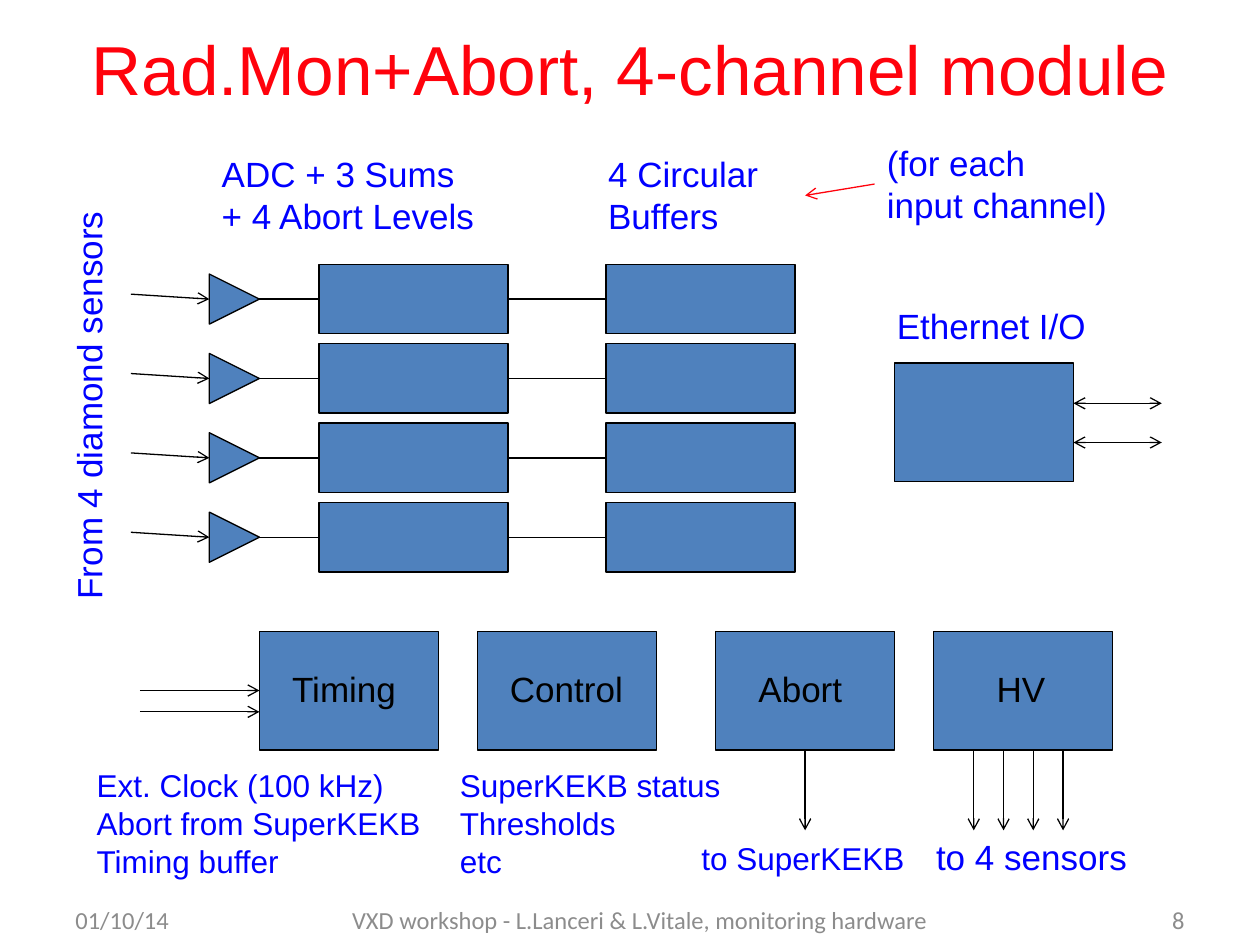
from dataclasses import dataclass

from lxml import etree
from pptx import Presentation
from pptx.dml.color import RGBColor
from pptx.enum.shapes import MSO_CONNECTOR, MSO_SHAPE
from pptx.enum.text import MSO_ANCHOR, PP_ALIGN
from pptx.oxml.ns import qn
from pptx.util import Cm, Pt

LEFT, MID, RIGHT = PP_ALIGN.LEFT, PP_ALIGN.CENTER, PP_ALIGN.RIGHT
MIDDLE, TOP = MSO_ANCHOR.MIDDLE, MSO_ANCHOR.TOP
RECT, WEDGE = MSO_SHAPE.RECTANGLE, MSO_SHAPE.ISOSCELES_TRIANGLE
STRAIGHT = MSO_CONNECTOR.STRAIGHT


@dataclass(frozen=True)
class Theme:
    red: RGBColor = RGBColor(0xFF, 0x02, 0x0C)
    blue: RGBColor = RGBColor(0x00, 0x00, 0xFF)
    black: RGBColor = RGBColor(0x00, 0x00, 0x00)
    gray: RGBColor = RGBColor(0x8C, 0x8C, 0x8C)
    fill: RGBColor = RGBColor(0x4F, 0x81, 0xBD)
    head: float = 39.6
    large: int = 20
    small: int = 18
    foot: int = 14
    stroke: float = 0.75
    font: str = "Arial"
    foot_font: str = "Calibri"


theme = Theme()

deck = Presentation()
deck.slide_width, deck.slide_height = Cm(25.4), Cm(19.05)
slide = deck.slides.add_slide(deck.slide_layouts[5])
shapes = slide.shapes


def write(shape, text, size, color, font=theme.font, align=LEFT, anchor=TOP):
    """Fill a shape with text in a single style."""
    frame = shape.text_frame
    frame.text = text
    frame.word_wrap = True
    frame.vertical_anchor = anchor
    for line in frame.paragraphs:
        line.alignment = align
        for run in line.runs:
            run.font.size = Pt(size)
            run.font.name = font
            run.font.color.rgb = color


def link(x1, y1, x2, y2, ends=(), color=theme.black):
    """Draw a line; ends names the open arrowheads, headEnd before tailEnd."""
    line = shapes.add_connector(STRAIGHT, Cm(x1), Cm(y1), Cm(x2), Cm(y2))
    line.line.color.rgb = color
    line.line.width = Pt(theme.stroke)
    props = line._element.spPr
    for end in ends:
        etree.SubElement(props.find(qn("a:ln")), qn(f"a:{end}"), type="arrow")
    etree.SubElement(props, qn("a:effectLst"))


TAIL = ("tailEnd",)
BOTH = ("headEnd", "tailEnd")

# Title
title = shapes.title
title.left, title.top, title.width, title.height = Cm(1.27), Cm(0.36), Cm(22.86), Cm(2.03)
write(title, "Rad.Mon+Abort, 4-channel module", theme.head, theme.red,
      align=MID, anchor=MIDDLE)

# Blocks: four input channels, then the I/O and service blocks
row_top, row_step = 5.33, 1.6
adc_x, buf_x, row_w, row_h = 6.43, 12.22, 3.81, 1.4
amp_x, amp_w = 4.22, 1.01
mids = [row_top + row_step * row + row_h / 2 for row in range(4)]
base_y, base_w, base_h = 12.73, 3.61, 2.39

blocks = []
for mid in mids:
    blocks.append((WEDGE, amp_x, mid - amp_w / 2, amp_w, amp_w))
    for x in (adc_x, buf_x):
        blocks.append((RECT, x, mid - row_h / 2, row_w, row_h))
for x in (5.23, 9.63, 14.43, 18.82):
    blocks.append((RECT, x, base_y, base_w, base_h))
blocks.append((RECT, 18.03, 7.32, base_w, base_h))

for kind, x, y, w, h in blocks:
    block = shapes.add_shape(kind, Cm(x), Cm(y), Cm(w), Cm(h))
    block.shadow.inherit = False
    block.fill.solid()
    block.fill.fore_color.rgb = theme.fill
    block.line.color.rgb = theme.black
    block.line.width = Pt(theme.stroke)
    if kind == WEDGE:
        block.rotation = 90

# Channel wiring
for mid in mids:
    link(2.64, mid - 0.1, amp_x, mid, TAIL)
    link(adc_x, mid, amp_x + amp_w, mid)
    link(buf_x, mid, adc_x + row_w, mid)

# Signals in and out of the other blocks
for y in (13.92, 14.35):
    link(2.82, y, 5.23, y, TAIL)
for y in (8.13, 8.92):
    link(21.64, y, 23.42, y, BOTH)
for x in (16.23, 19.63, 20.23, 20.83, 21.43):
    link(x, base_y + base_h, x, 16.74, TAIL)
link(17.63, 3.71, 16.23, 3.94, TAIL, theme.red)

# Labels
large, small, blue, black = theme.large, theme.small, theme.blue, theme.black
labels = [
    ("ADC + 3 Sums\n+ 4 Abort Levels", 4.22, 2.95, 8.61, 1.96, large, blue),
    ("4 Circular\nBuffers", 12.01, 2.95, 4.8, 1.96, large, blue),
    ("(for each\ninput channel)", 17.63, 2.72, 6.6, 1.96, large, blue),
    ("Ethernet I/O", 17.83, 6.02, 5.41, 1.12, large, blue),
    ("Timing", 5.64, 13.34, 2.79, 1.12, large, black),
    ("Control", 10.03, 13.34, 2.79, 1.12, large, black),
    ("Abort", 15.04, 13.34, 2.79, 1.12, large, black),
    ("HV", 19.84, 13.34, 1.6, 1.12, large, black),
    ("Ext. Clock (100 kHz)\nAbort from SuperKEKB\nTiming buffer",
     1.7, 15.32, 7.14, 2.57, small, blue),
    ("SuperKEKB status\nThresholds\netc", 9.02, 15.32, 6.3, 2.57, small, blue),
    ("to SuperKEKB", 13.89, 16.79, 5.38, 1.02, small, blue),
    ("to 4 sensors", 18.62, 16.71, 4.8, 1.12, large, blue),
]
for text, x, y, w, h, size, color in labels:
    write(shapes.add_textbox(Cm(x), Cm(y), Cm(w), Cm(h)), text, size, color)

side = shapes.add_textbox(Cm(-2.51), Cm(7.47), Cm(8.61), Cm(1.12))
side.rotation = 270
write(side, "From 4 diamond sensors", large, blue)

# Footer
for text, x, w, align in (
    ("01/10/14", 1.27, 4.11, LEFT),
    ("VXD workshop - L.Lanceri & L.Vitale, monitoring hardware", 5.38, 15.04, MID),
    ("8", 20.88, 3.25, RIGHT),
):
    foot = shapes.add_textbox(Cm(x), Cm(18.03), Cm(w), Cm(1.02))
    write(foot, text, theme.foot, theme.gray, theme.foot_font, align, MIDDLE)

deck.save("out.pptx")
